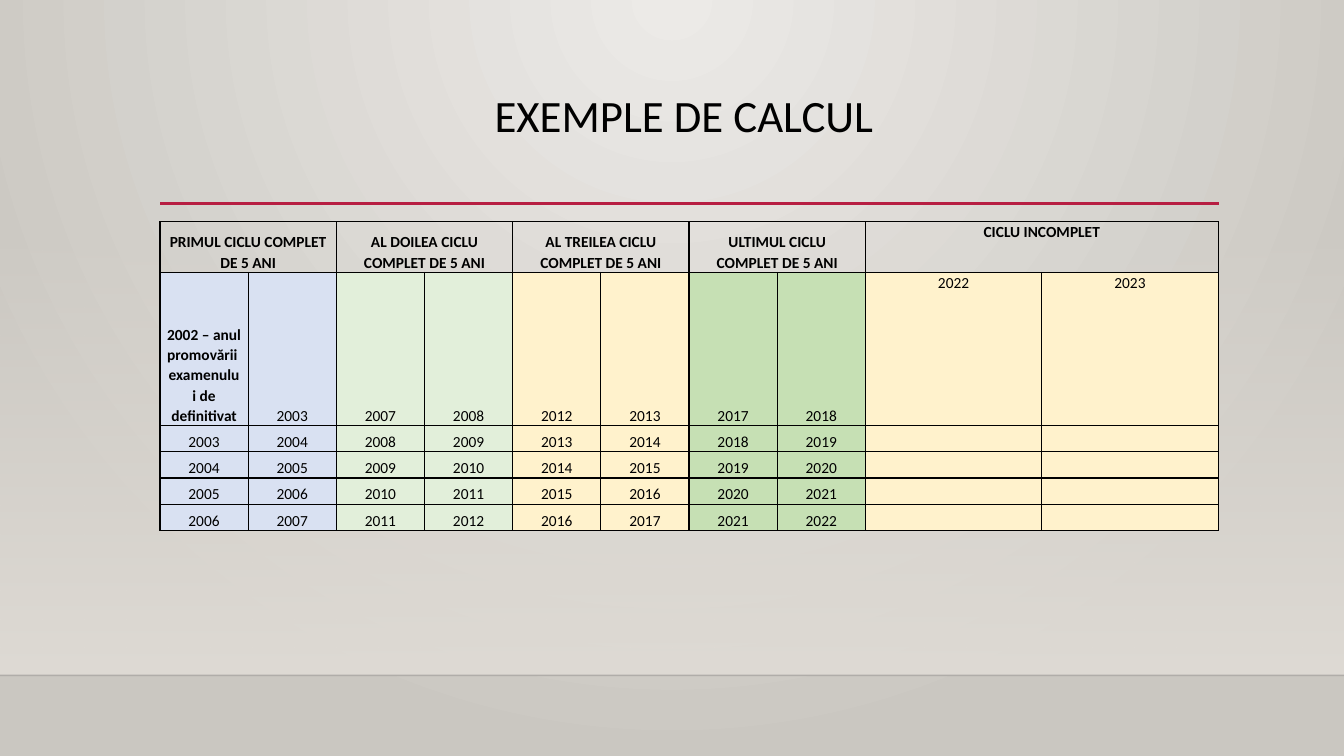
from dataclasses import dataclass

from lxml import etree
from pptx import Presentation
from pptx.dml.color import RGBColor
from pptx.enum.shapes import MSO_CONNECTOR, MSO_SHAPE
from pptx.enum.text import MSO_ANCHOR, PP_ALIGN
from pptx.oxml import parse_xml
from pptx.oxml.ns import nsdecls, qn
from pptx.util import Pt

RECT = MSO_SHAPE.RECTANGLE
LINE = MSO_CONNECTOR.STRAIGHT
MID = PP_ALIGN.CENTER
TOP = MSO_ANCHOR.TOP
LOW = MSO_ANCHOR.BOTTOM

FONT = "Calibri"
HUES = {
    "black": "000000", "red": "B71E42", "edge": "000001",
    "pale": "ECEAE7", "stone": "CAC7C1", "sand": "DFDBD5",
    "blue": "D9E1F2", "mint": "E2EFDA", "cream": "FFF2CC", "green": "C6E0B4",
}
WIDE, HIGH = 960, 540
LEFT = 114.3
FLOOR = 482.4
COL = 63
ROWS = [36.2, 109.4] + [18.72] * 4
START = 2002


@dataclass
class Cycle:
    head: str
    hue: str
    width: int = COL
    anchor: MSO_ANCHOR = LOW
    years: int = 5


@dataclass
class Stop:
    pos: int
    hue: str
    alpha: int = 100


@dataclass
class Rule:
    left: float
    right: float
    top: float
    hue: str
    weight: float
    alpha: int = 100


CYCLES = [
    Cycle("PRIMUL CICLU COMPLET DE 5 ANI", "blue"),
    Cycle("AL DOILEA CICLU COMPLET DE 5 ANI", "mint"),
    Cycle("AL TREILEA CICLU COMPLET DE 5 ANI", "cream"),
    Cycle("ULTIMUL CICLU COMPLET DE 5 ANI", "green"),
    Cycle("CICLU INCOMPLET", "cream", 2 * COL, TOP, 1),
]
FIRST = ["2002 – anul promovării ", "examenului de definitivat"]
RULES = [
    Rule(0, WIDE, FLOOR, "edge", 1, 20),
    Rule(LEFT, 870.9, 145.4, "red", 2.5),
]


def tint(name: str) -> RGBColor:
    return RGBColor.from_string(HUES[name])


def blend(parent, stops: list[Stop], shade: str) -> None:
    """Put a gradient where the plain fill of parent was."""
    marks = "".join(
        f'<a:gs pos="{s.pos * 1000}"><a:srgbClr val="{HUES[s.hue]}">'
        f'<a:alpha val="{s.alpha * 1000}"/></a:srgbClr></a:gs>' for s in stops)
    grad = parse_xml(f'<a:gradFill {nsdecls("a")} rotWithShape="1">'
                     f'<a:gsLst>{marks}</a:gsLst>{shade}</a:gradFill>')
    parent.replace(parent.find(qn("a:solidFill")), grad)


def draw_rule(slide, rule: Rule) -> None:
    line = slide.shapes.add_connector(
        LINE, Pt(rule.left), Pt(rule.top), Pt(rule.right), Pt(rule.top))
    line.line.color.rgb = tint(rule.hue)
    line.line.width = Pt(rule.weight)
    props = line.element.spPr
    etree.SubElement(props, qn("a:effectLst"))
    if rule.alpha < 100:
        paint = next(props.iter(qn("a:srgbClr")))
        etree.SubElement(paint, qn("a:alpha"), val=str(rule.alpha * 1000))


def write(frame, lines: list[str], size: int, space: float, bold: bool = False) -> None:
    for i, text in enumerate(lines):
        para = frame.paragraphs[0] if i == 0 else frame.add_paragraph()
        para.alignment = MID
        para.line_spacing = space
        run = para.add_run()
        run.text = text
        run.font.name = FONT
        run.font.size = Pt(size)
        run.font.bold = bold
        run.font.color.rgb = tint("black")


def fill_cell(cell, lines: list[str], anchor: MSO_ANCHOR,
              hue: str = "", bold: bool = False) -> None:
    cell.margin_left = cell.margin_right = Pt(5)
    cell.margin_top = cell.margin_bottom = Pt(0)
    cell.vertical_anchor = anchor
    if hue:
        cell.fill.solid()
        cell.fill.fore_color.rgb = tint(hue)
    else:
        cell.fill.background()
    props = cell._tc.get_or_add_tcPr()
    for i, side in enumerate("LRTB"):
        props.insert(i, parse_xml(
            f'<a:ln{side} {nsdecls("a")} w="{Pt(1)}"><a:solidFill>'
            f'<a:srgbClr val="{HUES["black"]}"/></a:solidFill></a:ln{side}>'))
    if lines:
        write(cell.text_frame, lines, 11, 1.07, bold)
    else:
        # An empty cell still needs a small font to keep its row low
        para = cell.text_frame.paragraphs[0]._p
        etree.SubElement(para, qn("a:endParaRPr"), sz="1100")


def draw_table(slide) -> None:
    width = sum(2 * c.width for c in CYCLES)
    grid = slide.shapes.add_table(
        len(ROWS), 2 * len(CYCLES), Pt(LEFT), Pt(158.4), Pt(width), Pt(sum(ROWS))).table
    grid.first_row = grid.horz_banding = False
    for row, high in zip(grid.rows, ROWS):
        row.height = Pt(high)
    for n, cycle in enumerate(CYCLES):
        for side in range(2):
            col = 2 * n + side
            grid.columns[col].width = Pt(cycle.width)
            fill_cell(grid.cell(0, col), [] if side else [cycle.head],
                      cycle.anchor, bold=True)
            # Years rise by one per row and by five per cycle
            for r in range(1, len(ROWS)):
                first = r == 1 and col == 0
                year = str(START + 5 * n + r - 1 + side)
                lines = FIRST if first else [year] if r <= cycle.years else []
                fill_cell(grid.cell(r, col), lines, cycle.anchor, cycle.hue, first)
        grid.cell(0, 2 * n).merge(grid.cell(0, 2 * n + 1))


def main() -> None:
    deck = Presentation()
    deck.slide_width, deck.slide_height = Pt(WIDE), Pt(HIGH)
    slide = deck.slides.add_slide(deck.slide_layouts[6])

    # Backdrop
    slide.background.fill.solid()
    blend(next(slide.element.iter(qn("p:bgPr"))),
          [Stop(0, "pale"), Stop(100, "stone")],
          '<a:path path="circle">'
          '<a:fillToRect l="43000" t="0" r="43000" b="100000"/></a:path>')

    # Wall that fades in down to the floor
    wall = slide.shapes.add_shape(RECT, Pt(0), Pt(159.1), Pt(WIDE), Pt(FLOOR - 159.1))
    wall.shadow.inherit = False
    wall.line.fill.background()
    wall.fill.solid()
    blend(wall.element.spPr, [Stop(0, "sand", 0), Stop(100, "sand")],
          '<a:lin ang="5400000" scaled="0"/>')

    for rule in RULES:
        draw_rule(slide, rule)

    # Title
    title = slide.shapes.add_textbox(Pt(LEFT), Pt(63.4), Pt(756), Pt(82.8)).text_frame
    title.word_wrap = True
    title.vertical_anchor = TOP
    write(title, ["EXEMPLE DE CALCUL "], 32, 0.9)

    draw_table(slide)
    deck.save("out.pptx")


if __name__ == "__main__":
    main()
